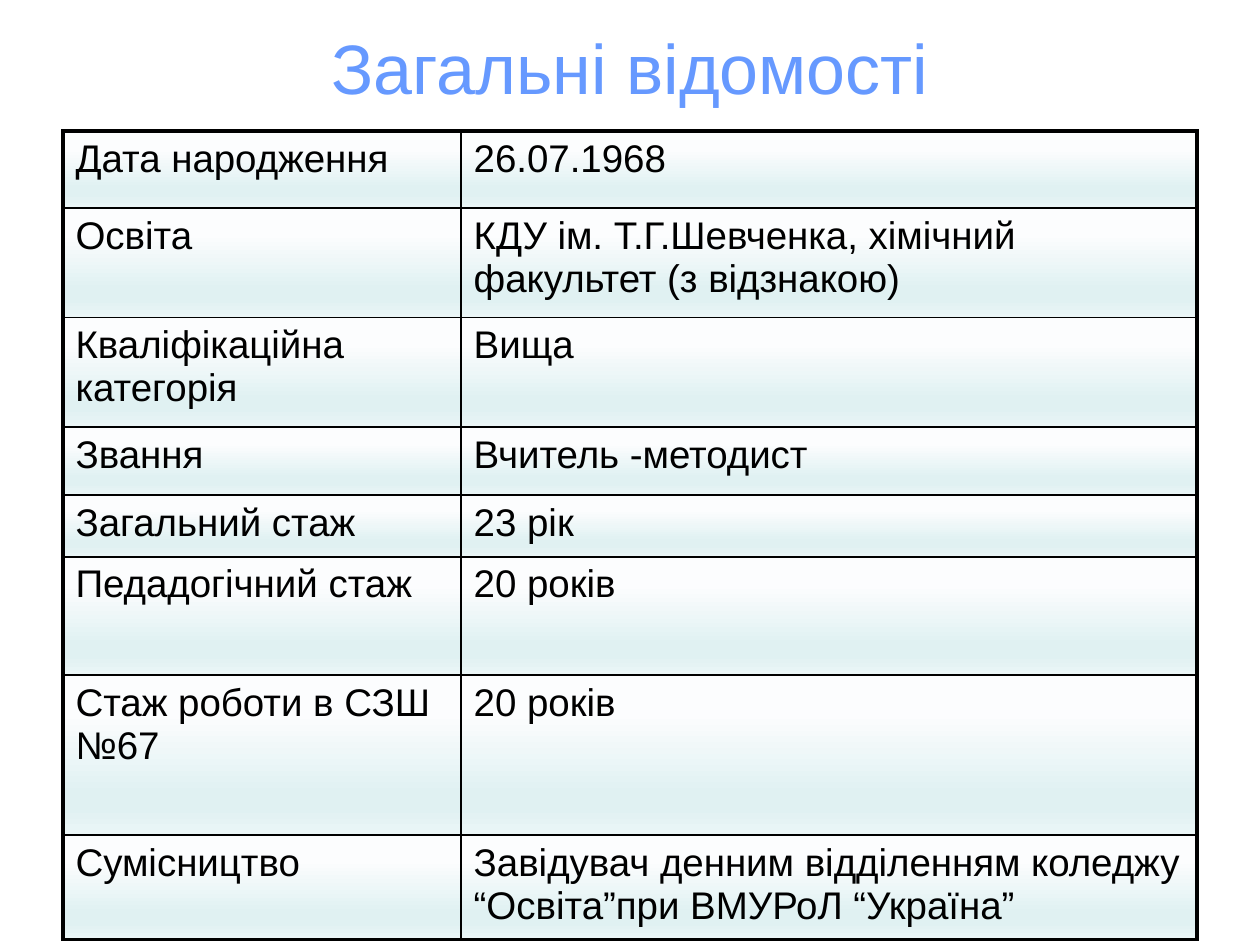
from dataclasses import dataclass

from lxml import etree
from pptx import Presentation
from pptx.dml.color import RGBColor
from pptx.enum import text as t
from pptx.oxml import ns
from pptx.util import Inches, Pt


@dataclass(frozen=True)
class Theme:
    font: str = "Arial"
    title_color: str = "6699FF"
    text_color: str = "000000"
    border_color: str = "000000"
    title_size: float = 40
    cell_size: float = 22
    outer_line: float = 2.25
    inner_line: float = 1
    gradient: tuple = ((24, "FCFDFE"), (74, "E0F1F2"), (83, "E0F1F2"), (100, "EBF6F7"))


THEME = Theme()
COLUMN_WIDTHS = (3.16, 5.84)
FACTS = (  # label, value, row height in inches
    ("Дата народження", "26.07.1968", 0.61),
    ("Освіта", "КДУ ім. Т.Г.Шевченка, хімічний факультет (з відзнакою)", 0.87),
    ("Кваліфікаційна категорія", "Вища", 0.87),
    ("Звання", "Вчитель -методист", 0.54),
    ("Загальний стаж", "23 рік", 0.49),
    ("Педадогічний стаж", "20 років", 0.94),
    ("Стаж роботи в СЗШ №67", "20 років", 1.27),
    ("Сумісництво", "Завідувач денним відділенням коледжу “Освіта”при ВМУРоЛ “Україна”", 0.83),
)


def write(frame, words, *, size, color, align=t.PP_ALIGN.LEFT, anchor=t.MSO_ANCHOR.TOP):
    frame.word_wrap = True
    frame.vertical_anchor = anchor
    paragraph = frame.paragraphs[0]
    paragraph.alignment = align
    paragraph.space_before = Pt(0)
    run = paragraph.add_run()
    run.text = words
    run.font.name = THEME.font
    run.font.size = Pt(size)
    run.font.color.rgb = RGBColor.from_string(color)


def add_element(parent, tag, **attributes):
    values = {name: str(value) for name, value in attributes.items()}
    return etree.SubElement(parent, ns.qn(tag), values)


def border_cell(properties, outer_sides):
    for side in "LRTB":
        width = THEME.outer_line if side in outer_sides else THEME.inner_line
        line = add_element(properties, f"a:ln{side}", w=Pt(width))
        fill = add_element(line, "a:solidFill")
        add_element(fill, "a:srgbClr", val=THEME.border_color)


def shade_cell(properties):
    fill = add_element(properties, "a:gradFill", rotWithShape=1)
    stops = add_element(fill, "a:gsLst")
    for percent, color in THEME.gradient:
        stop = add_element(stops, "a:gs", pos=percent * 1000)
        add_element(stop, "a:srgbClr", val=color)
    add_element(fill, "a:lin", ang=90 * 60000, scaled=0)


def place_title(slide, left, top, width, height):
    title = slide.shapes.title
    title.left, title.top, title.width, title.height = left, top, width, height
    write(title.text_frame, "Загальні відомості", size=THEME.title_size,
          color=THEME.title_color, align=t.PP_ALIGN.CENTER, anchor=t.MSO_ANCHOR.MIDDLE)
    title.text_frame.auto_size = t.MSO_AUTO_SIZE.NONE


def place_facts(slide, left, top, width, height):
    table = slide.shapes.add_table(len(FACTS), len(COLUMN_WIDTHS),
                                   left, top, width, height).table
    table.first_row = table.horz_banding = False
    for column, column_width in zip(table.columns, COLUMN_WIDTHS):
        column.width = Inches(column_width)
    last_row = len(FACTS) - 1
    for row, (label, value, row_height) in enumerate(FACTS):
        table.rows[row].height = Inches(row_height)
        row_edges = {0: "T", last_row: "B"}.get(row, "")
        for column, (words, column_edge) in enumerate(((label, "L"), (value, "R"))):
            cell = table.cell(row, column)
            cell.vertical_anchor = t.MSO_ANCHOR.TOP
            write(cell.text_frame, words, size=THEME.cell_size, color=THEME.text_color)
            properties = cell._tc.get_or_add_tcPr()
            border_cell(properties, row_edges + column_edge)
            shade_cell(properties)


def main():
    deck = Presentation()
    deck.slide_width, deck.slide_height = Inches(10), Inches(7.5)
    slide = deck.slides.add_slide(deck.slide_layouts.get_by_name("Title Only"))
    place_title(slide, Inches(0.5), Inches(0.3), Inches(9), Inches(0.46))
    place_facts(slide, Inches(0.5), Inches(1.04), Inches(9), Inches(6.43))
    deck.save("out.pptx")


if __name__ == "__main__":
    main()
